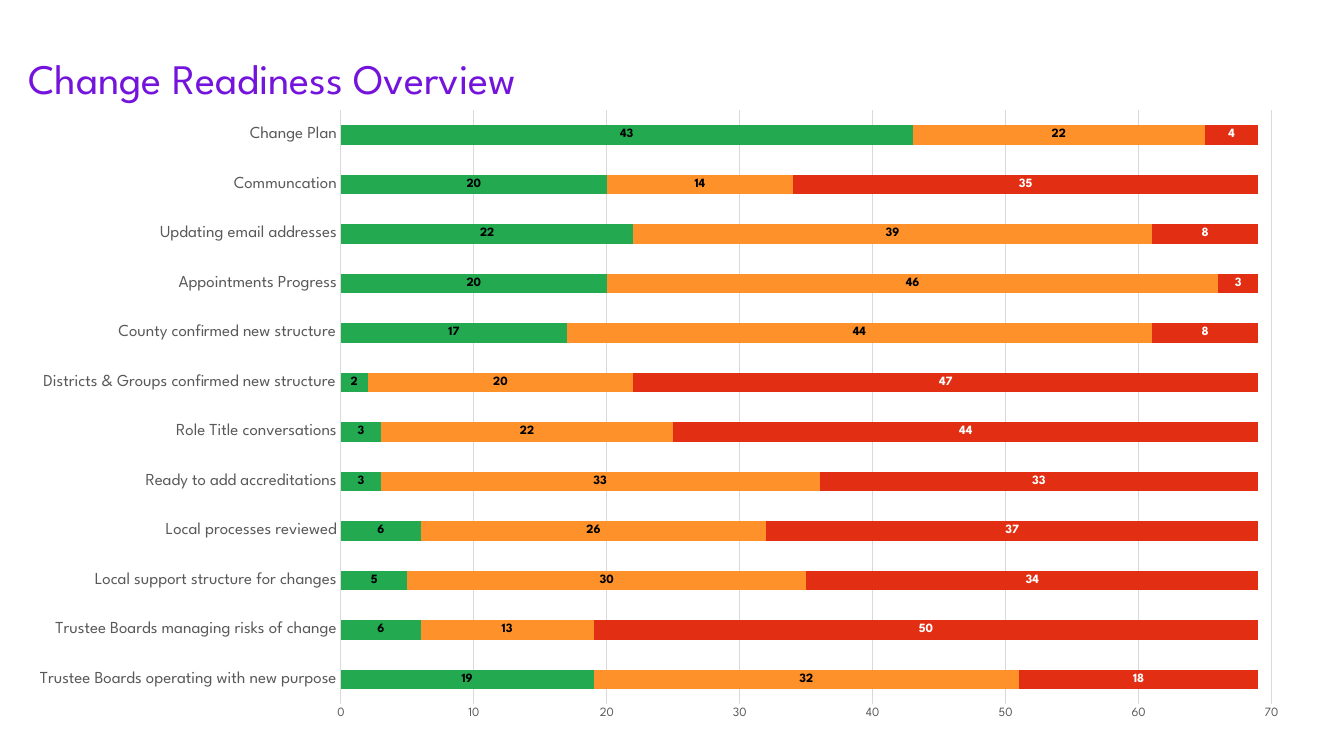
from lxml import etree
from pptx import Presentation
from pptx import util as u
from pptx.chart.data import CategoryChartData
from pptx.dml.color import RGBColor
from pptx.enum import chart as ch
from pptx.oxml.ns import qn

PX = 9525  # EMU per px, 96 px to the inch
FONT = "League Spartan"
PURPLE, GREEN, ORANGE, RED = "7413DC", "23A950", "FF912A", "E22E12"
BLACK, WHITE, GREY, RULE = "000000", "FFFFFF", "595959", "D9D9D9"

# topic: green, amber and red counts, from the bottom bar up
READINESS = {
    "Trustee Boards operating with new purpose": (19, 32, 18),
    "Trustee Boards managing risks of change": (6, 13, 50),
    "Local support structure for changes": (5, 30, 34),
    "Local processes reviewed": (6, 26, 37),
    "Ready to add accreditations": (3, 33, 33),
    "Role Title conversations": (3, 22, 44),
    "Districts & Groups confirmed new structure": (2, 20, 47),
    "County confirmed new structure": (17, 44, 8),
    "Appointments Progress": (20, 46, 3),
    "Updating email addresses": (22, 39, 8),
    "Communcation": (20, 14, 35),
    "Change Plan": (43, 22, 4),
}
BAR_STYLES = [(GREEN, BLACK), (ORANGE, BLACK), (RED, WHITE)]
PLOT_AREA = {"x": 0.25, "y": 0.02, "w": 0.72, "h": 0.94}


def rgb(value):
    return RGBColor.from_string(value)


def px(*lengths):
    return [u.Emu(length * PX) for length in lengths]


class SlideBuilder:
    def __init__(self, page):
        self.page = page

    def style_font(self, font, size, color, bold=False):
        font.name, font.size, font.bold = FONT, u.Pt(size), bold
        font.color.rgb = rgb(color)

    def style_line(self, line):
        line.color.rgb = rgb(RULE)
        line.width = u.Pt(0.75)

    def title(self, words, *bounds):
        frame = self.page.shapes.add_textbox(*px(*bounds)).text_frame
        frame.word_wrap = True
        frame.margin_left = frame.margin_right = 0
        frame.margin_top = frame.margin_bottom = 0
        para = frame.paragraphs[0]
        para.text = words
        self.style_font(para.font, 30, PURPLE)

    def axis(self, axis, size):
        axis.major_tick_mark = axis.minor_tick_mark = ch.XL_TICK_MARK.NONE
        self.style_font(axis.tick_labels.font, size, GREY)

    def plot_layout(self, chart):
        """Fix the inner plot area as fractions of the chart frame."""
        area = chart.plots[0]._element.getparent()
        for old in area.findall(qn("c:layout")):
            area.remove(old)
        layout = etree.Element(qn("c:layout"))
        manual = etree.SubElement(layout, qn("c:manualLayout"))
        settings = {"layoutTarget": "inner", "xMode": "edge", "yMode": "edge"}
        for name, value in {**settings, **PLOT_AREA}.items():
            etree.SubElement(manual, qn(f"c:{name}"), val=str(value))
        area.insert(0, layout)

    def stacked_bars(self, rows, *bounds):
        data = CategoryChartData()
        data.categories = list(rows)
        for number, values in enumerate(zip(*rows.values()), 1):
            data.add_series(f"Series {number}", values)
        chart = self.page.shapes.add_chart(
            ch.XL_CHART_TYPE.BAR_STACKED, *px(*bounds), data).chart
        chart.has_title = chart.has_legend = False
        self.style_font(chart.font, 10, BLACK)

        self.axis(chart.category_axis, 12)
        self.style_line(chart.category_axis.format.line)
        counts = chart.value_axis
        self.axis(counts, 9)
        counts.minimum_scale, counts.maximum_scale = 0, 70
        counts.major_unit = 10
        counts.format.line.fill.background()
        self.style_line(counts.major_gridlines.format.line)

        plot = chart.plots[0]
        plot.gap_width, plot.overlap = 150, 100
        plot.vary_by_categories = False
        for series, (fill, label_color) in zip(plot.series, BAR_STYLES):
            series.format.fill.solid()
            series.format.fill.fore_color.rgb = rgb(fill)
            labels = series.data_labels
            labels.show_value = True
            labels.position = ch.XL_LABEL_POSITION.CENTER
            self.style_font(labels.font, 9, label_color, bold=True)
        self.plot_layout(chart)


def main():
    deck = Presentation()
    deck.slide_width, deck.slide_height = px(1280, 720)
    slide = SlideBuilder(deck.slides.add_slide(deck.slide_layouts[6]))
    slide.stacked_bars(READINESS, 17, 93, 1231, 602)
    slide.title("Change Readiness Overview", 27, 50, 749, 48)
    deck.save("out.pptx")


if __name__ == "__main__":
    main()
